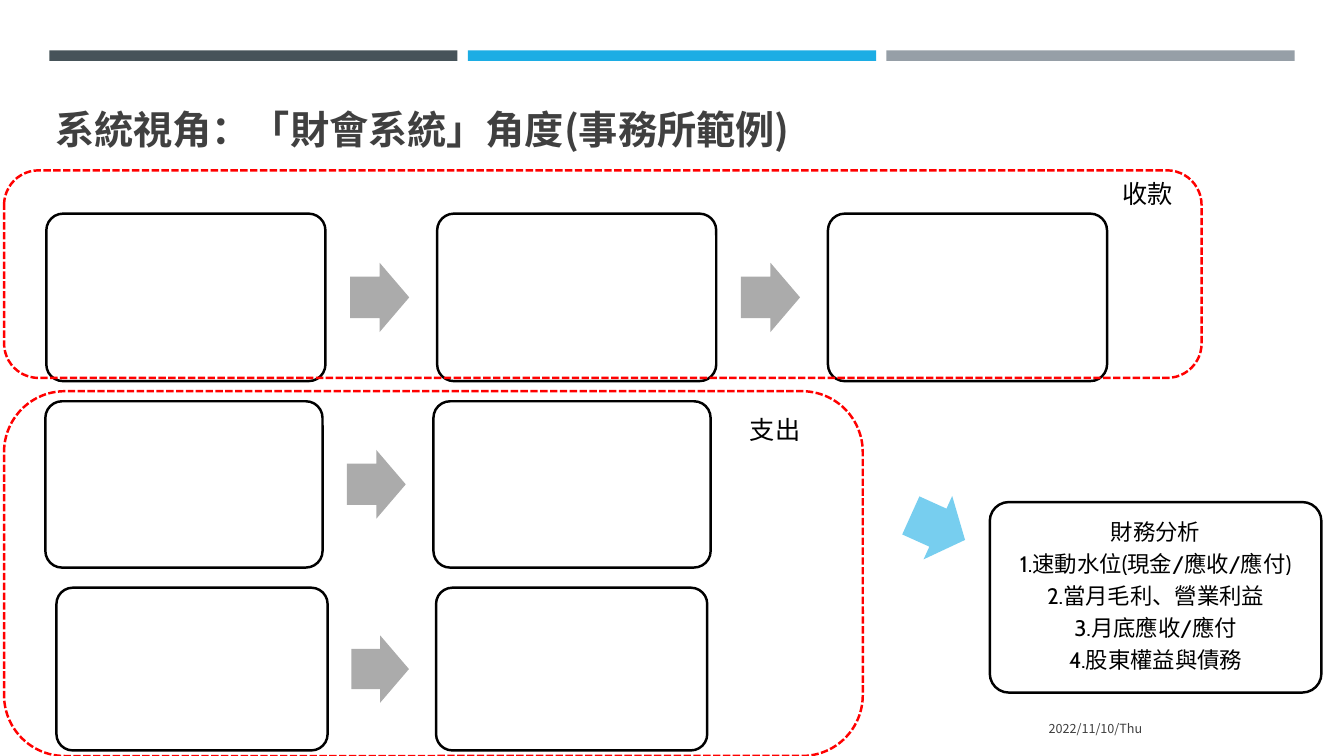
from pptx import Presentation
from pptx.dml.color import RGBColor
from pptx.enum.dml import MSO_LINE
from pptx.enum.shapes import MSO_SHAPE
from pptx.enum.text import MSO_ANCHOR, PP_ALIGN
from pptx.oxml.ns import qn
from pptx.util import Pt

RECTANGLE = MSO_SHAPE.RECTANGLE
ROUNDED = MSO_SHAPE.ROUNDED_RECTANGLE
ARROW = MSO_SHAPE.RIGHT_ARROW
DASH = MSO_LINE.SQUARE_DOT
TOP, MIDDLE, BOTTOM = MSO_ANCHOR.TOP, MSO_ANCHOR.MIDDLE, MSO_ANCHOR.BOTTOM
LEFT, CENTER, RIGHT = PP_ALIGN.LEFT, PP_ALIGN.CENTER, PP_ALIGN.RIGHT

CJK_FONT = "Noto Sans CJK TC"
LATIN_FONT = "Cabin"
COLORS = {
    "slate": "465359", "blue": "1CADE4", "gray": "969FA7",
    "arrow": "ABABAB", "light_blue": "77CEEF", "red": "FF0000",
    "black": "000000", "white": "FFFFFF", "text": "404040",
}

presentation = Presentation()
presentation.slide_width = Pt(960)
presentation.slide_height = Pt(540)
slide = presentation.slides.add_slide(presentation.slide_layouts[6])


def add_shape(kind, left, top, width, height, fill=None, line=None):
    shape = slide.shapes.add_shape(kind, Pt(left), Pt(top), Pt(width), Pt(height))
    shape.shadow.inherit = False
    if fill:
        shape.fill.solid()
        shape.fill.fore_color.rgb = RGBColor.from_string(COLORS[fill])
    else:
        shape.fill.background()
    if line:
        shape.line.color.rgb = RGBColor.from_string(COLORS[line])
        shape.line.width = Pt(1.75)
    else:
        shape.line.fill.background()
    return shape


def add_text(text, left, top, width, height, size, font=LATIN_FONT, color="black",
             align=LEFT, anchor=TOP, wrap=True, bold=False):
    box = slide.shapes.add_textbox(Pt(left), Pt(top), Pt(width), Pt(height))
    frame = box.text_frame
    frame.text = text
    frame.word_wrap = wrap
    frame.vertical_anchor = anchor
    for paragraph in frame.paragraphs:
        paragraph.alignment = align
        for run in paragraph.runs:
            run.font.size = Pt(size)
            run.font.bold = bold
            run.font.name = font
            run.font.color.rgb = RGBColor.from_string(COLORS[color])
            east_asian = run.font._element.makeelement(qn("a:ea"), {"typeface": CJK_FONT})
            run.font._element.find(qn("a:latin")).addnext(east_asian)
    return frame


# Header bars
for index, color in enumerate(("slate", "blue", "gray")):
    add_shape(RECTANGLE, 35.2 + index * 299, 36, 291.6, 7.5, color)

# Title
add_text("系統視角：「財會系統」角度(事務所範例)", 32.4, 18.7, 868.3, 93.6, 28,
         font=CJK_FONT, color="text", anchor=BOTTOM, bold=True)

# Process rows: proportions follow the box width
process_rows = (
    (33.1, 152.6, 199.4, 3),
    (32.4, 286.6, 198, 2),
    (40.3, 419.8, 193.7, 2),
)
for left, top, width, count in process_rows:
    height = width * 0.6
    arrow_height = width * 0.248
    for index in range(count):
        box_left = left + index * width * 1.4
        box = add_shape(ROUNDED, box_left, top, width, height, "white", "black")
        box.adjustments[0] = 0.1
        if index < count - 1:
            arrow = add_shape(ARROW, box_left + width * 1.088,
                              top + (height - arrow_height) / 2,
                              width * 0.212, arrow_height, "arrow")
            arrow.adjustments[0] = 0.6

# Date
add_text("2022/11/10/Thu", 599, 506.2, 224, 28.8, 9, font=CJK_FONT,
         color="text", align=RIGHT, anchor=MIDDLE)

# Financial analysis
analysis_box = add_shape(ROUNDED, 707, 358.6, 236.9, 136.1, "white", "black")
analysis_box.adjustments[0] = 0.1
analysis = add_text(
    "財務分析\n1.速動水位(現金/應收/應付)\n2.當月毛利、營業利益\n3.月底應收/應付\n4.股東權益與債務",
    711.4, 362.2, 228.2, 128.2, 16, align=CENTER, anchor=MIDDLE)
analysis.margin_left = analysis.margin_right = Pt(6.5)
analysis.margin_top = analysis.margin_bottom = Pt(6.5)
for paragraph in analysis.paragraphs:
    paragraph.line_spacing = 0.9
    paragraph.space_after = Pt(5.6)

# Arrow to the analysis
analysis_arrow = add_shape(ARROW, 648.7, 352.1, 42.5, 49.7, "light_blue")
analysis_arrow.adjustments[0] = 0.6
analysis_arrow.rotation = 24.3

# Dashed groups and their labels
groups = (
    ("收款", 121.7, 855.4, 148.3, 794.9, 123.8),
    ("支出", 279.4, 613.4, 260.6, 528.5, 292.3),
)
for label, top, width, height, label_left, label_top in groups:
    frame = add_shape(ROUNDED, 2.9, top, width, height, line="red")
    frame.line.dash_style = DASH
    add_text(label, label_left, label_top, 51.1, 28.8, 18, wrap=False)

presentation.save("out.pptx")
